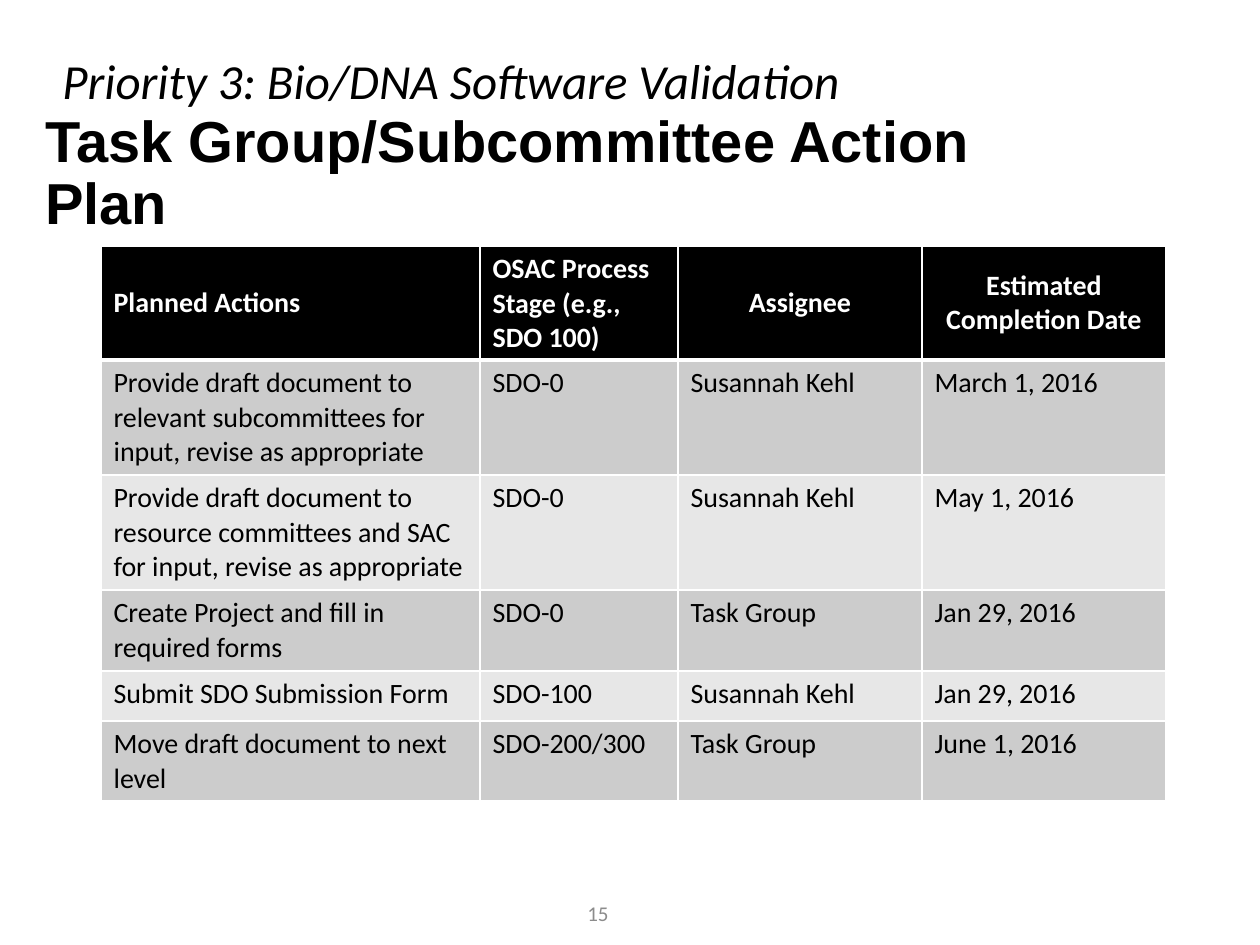
"""Build the action plan slide for the Bio/DNA software validation priority."""
from dataclasses import dataclass

from lxml import etree
from pptx import Presentation
from pptx.dml.color import RGBColor
from pptx.enum.text import MSO_ANCHOR, PP_ALIGN
from pptx.oxml.ns import qn
from pptx.slide import Slide
from pptx.table import _Cell
from pptx.text.text import TextFrame
from pptx.util import Emu, Inches, Pt

TOP, MIDDLE = MSO_ANCHOR.TOP, MSO_ANCHOR.MIDDLE
LEFT, CENTER = PP_ALIGN.LEFT, PP_ALIGN.CENTER
BLACK = RGBColor(0x00, 0x00, 0x00)
WHITE = RGBColor(0xFF, 0xFF, 0xFF)
DARK_BAND = RGBColor(0xCC, 0xCC, 0xCC)
LIGHT_BAND = RGBColor(0xE7, 0xE7, 0xE7)
PAGE_GRAY = RGBColor(0x8C, 0x8C, 0x8C)
PX_PER_INCH = 126


@dataclass(frozen=True)
class Style:
    size: int
    color: RGBColor = BLACK
    font: str = "Calibri"
    bold: bool = False
    italic: bool = False
    align: PP_ALIGN = LEFT
    anchor: MSO_ANCHOR = TOP
    line_spacing: float = 1.0


@dataclass(frozen=True)
class Label:
    text: str
    left: int
    top: int
    width: int
    height: int
    style: Style


@dataclass(frozen=True)
class Column:
    heading: str
    width: int
    align: PP_ALIGN = LEFT


@dataclass(frozen=True)
class Action:
    task: str
    stage: str
    assignee: str
    due: str
    height: int


LABELS = [
    Label("Task Group/Subcommittee Action Plan", 33, 83, 1086, 183,
          Style(33, font="Arial", bold=True, anchor=MIDDLE, line_spacing=0.9)),
    Label("Priority 3: Bio/DNA Software Validation", 50, 44, 955, 72,
          Style(28, italic=True)),
    Label("15", 456, 888, 284, 50,
          Style(12, PAGE_GRAY, align=CENTER, anchor=MIDDLE)),
]
COLUMNS = [
    Column("Planned Actions", 379),
    Column("OSAC Process Stage (e.g., SDO 100)", 198),
    Column("Assignee", 244, CENTER),
    Column("Estimated Completion Date", 244, CENTER),
]
ACTIONS = [
    Action("Provide draft document to relevant subcommittees for input, "
           "revise as appropriate", "SDO-0", "Susannah Kehl", "March 1, 2016", 115),
    Action("Provide draft document to resource committees and SAC for input, "
           "revise as appropriate", "SDO-0", "Susannah Kehl", "May 1, 2016", 115),
    Action("Create Project and fill in required forms",
           "SDO-0", "Task Group", "Jan 29, 2016", 81),
    Action("Submit SDO Submission Form",
           "SDO-100", "Susannah Kehl", "Jan 29, 2016", 50),
    Action("Move draft document to next level",
           "SDO-200/300", "Task Group", "June 1, 2016", 80),
]
TABLE_LEFT, TABLE_TOP, HEADER_HEIGHT = 101, 246, 114
BODY_STYLE = Style(16)


def px(length: int) -> Emu:
    """Turn pixels into EMU."""
    return Emu(round(length * Inches(1) / PX_PER_INCH))


def write(frame: TextFrame, text: str, style: Style) -> None:
    """Put one styled run into a text frame."""
    paragraph = frame.paragraphs[0]
    paragraph.alignment = style.align
    paragraph.line_spacing = style.line_spacing
    run = paragraph.add_run()
    run.text = text
    run.font.name = style.font
    run.font.size = Pt(style.size)
    run.font.bold = style.bold
    run.font.italic = style.italic
    run.font.color.rgb = style.color


def add_label(slide: Slide, label: Label) -> None:
    """Add a wrapped text box."""
    frame = slide.shapes.add_textbox(
        px(label.left), px(label.top), px(label.width), px(label.height)).text_frame
    frame.word_wrap = True
    frame.vertical_anchor = label.style.anchor
    write(frame, label.text, label.style)


def add_borders(cell: _Cell, top: int, bottom: int) -> None:
    """Draw white cell borders, with widths in points."""
    properties = cell._tc.get_or_add_tcPr()
    for side, width in (("L", 1), ("R", 1), ("T", top), ("B", bottom)):
        line = etree.SubElement(properties, qn(f"a:ln{side}"), w=str(Pt(width)))
        fill = etree.SubElement(line, qn("a:solidFill"))
        etree.SubElement(fill, qn("a:srgbClr"), val=str(WHITE))


def fill_cell(cell: _Cell, text: str, style: Style, fill: RGBColor,
              top: int, bottom: int) -> None:
    """Set the borders, fill and text of one cell."""
    add_borders(cell, top, bottom)
    cell.fill.solid()
    cell.fill.fore_color.rgb = fill
    cell.vertical_anchor = style.anchor
    write(cell.text_frame, text, style)


def add_action_table(slide: Slide) -> None:
    """Add the table of planned actions."""
    heights = [HEADER_HEIGHT] + [action.height for action in ACTIONS]
    table = slide.shapes.add_table(
        len(heights), len(COLUMNS), px(TABLE_LEFT), px(TABLE_TOP),
        px(sum(column.width for column in COLUMNS)), px(sum(heights))).table
    table.horz_banding = False
    for row, height in zip(table.rows, heights):
        row.height = px(height)
    for index, column in enumerate(COLUMNS):
        table.columns[index].width = px(column.width)
        heading_style = Style(16, WHITE, bold=True, align=column.align, anchor=MIDDLE)
        fill_cell(table.cell(0, index), column.heading, heading_style, BLACK, 1, 3)
    for row, action in enumerate(ACTIONS, start=1):
        band = DARK_BAND if row % 2 else LIGHT_BAND
        top = 3 if row == 1 else 1
        values = (action.task, action.stage, action.assignee, action.due)
        for index, value in enumerate(values):
            fill_cell(table.cell(row, index), value, BODY_STYLE, band, top, 1)


def main() -> None:
    """Build and save the slide."""
    deck = Presentation()
    deck.slide_width, deck.slide_height = Inches(10), Inches(7.5)
    slide = deck.slides.add_slide(deck.slide_layouts[6])
    title, *other_labels = LABELS
    add_label(slide, title)
    add_action_table(slide)
    for label in other_labels:
        add_label(slide, label)
    deck.save("out.pptx")


if __name__ == "__main__":
    main()
